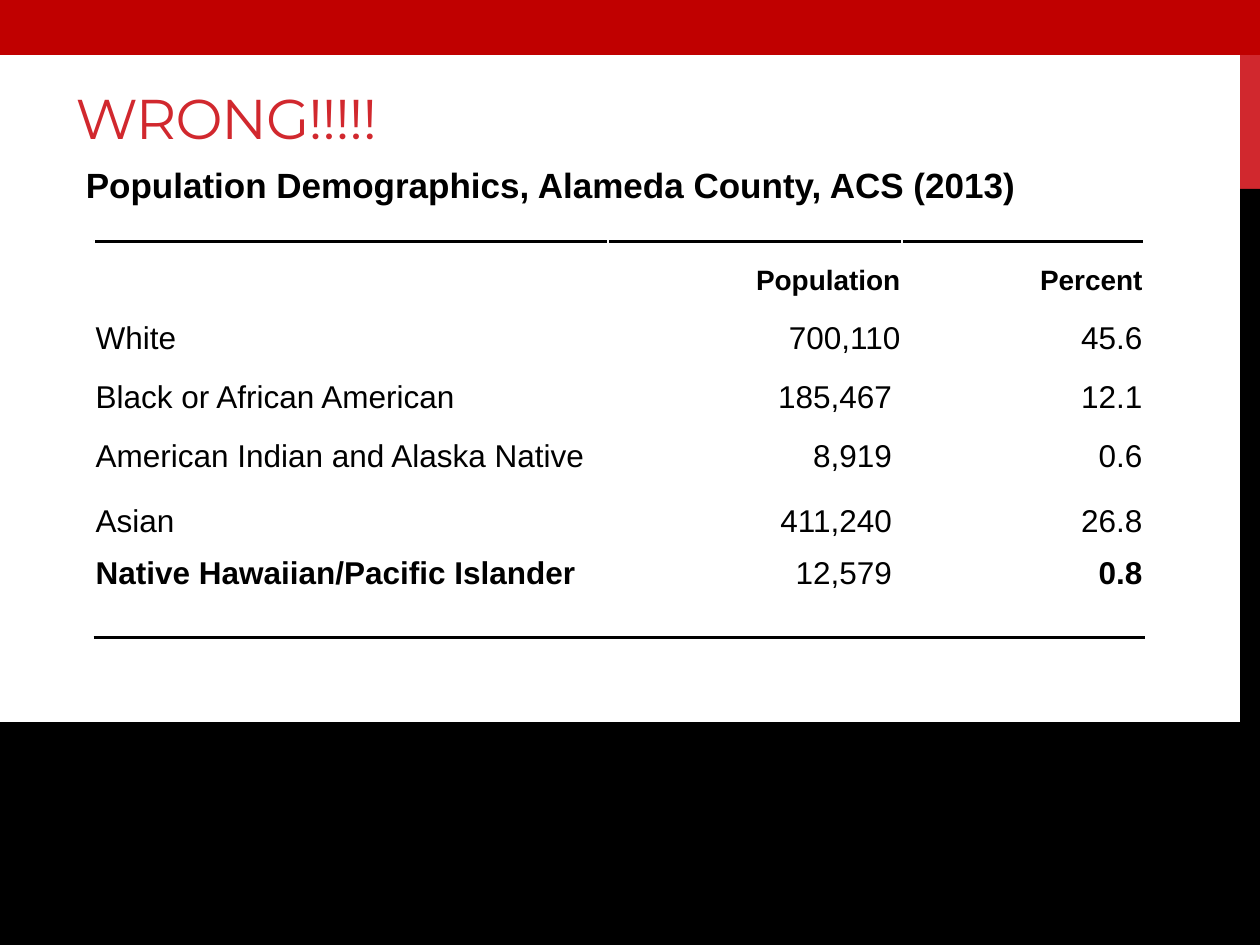
from lxml import etree
from pptx import Presentation
from pptx.dml.color import RGBColor
from pptx.enum.shapes import MSO_SHAPE
from pptx.enum.text import MSO_ANCHOR, MSO_AUTO_SIZE, PP_ALIGN
from pptx.oxml.ns import qn
from pptx.util import Cm, Pt

RECT = MSO_SHAPE.RECTANGLE
LEFT, RIGHT = PP_ALIGN.LEFT, PP_ALIGN.RIGHT
TOP, MIDDLE, BOTTOM = MSO_ANCHOR.TOP, MSO_ANCHOR.MIDDLE, MSO_ANCHOR.BOTTOM

RED, DARK_RED, BLACK, WHITE = "D1282E", "C00000", "000000", "FFFFFF"

TITLE = "WRONG!!!!!"
SUBTITLE = "Population Demographics, Alameda County, ACS (2013)"
ROWS = [
    ("", "Population", "Percent"),
    ("White", "700,110", "45.6"),
    ("Black or African American", "185,467", "12.1"),
    ("American Indian and Alaska Native", "8,919", "0.6"),
    ("Asian", "411,240", "26.8"),
    ("Native Hawaiian/Pacific Islander", "12,579", "0.8"),
]
BOLD_CELLS = {(0, 1), (0, 2), (5, 0), (5, 2)}
INDENTED_ROWS = range(2, 6)  # populations set slightly in from the right
COL_WIDTHS = [10.36, 5.92, 4.88]
ROW_HEIGHTS = [1.47, 1.19, 1.19, 1.3, 1.06, 1.77]

# left, top, width, height in cm, fill, outlined
BANDS = [
    (25, 0, 0.4, 3.81, RED, False),
    (25, 3.81, 0.4, 15.24, BLACK, False),
    (0, 14.6, 25.4, 4.45, BLACK, True),
    (0, 0, 25.4, 1.07, DARK_RED, True),
]


def rgb(color):
    return RGBColor.from_string(color)


def write(tf, text, size=18, font="Arial", color=BLACK, bold=False, align=LEFT):
    p = tf.paragraphs[0]
    p.alignment = align
    r = p.add_run()
    r.text = text
    r.font.size, r.font.name, r.font.bold = Pt(size), font, bold
    r.font.color.rgb = rgb(color)
    return p


def add_band(slide, left, top, width, height, color, outlined):
    sp = slide.shapes.add_shape(RECT, Cm(left), Cm(top), Cm(width), Cm(height))
    sp.shadow.inherit = False
    sp.fill.solid()
    sp.fill.fore_color.rgb = rgb(color)
    if outlined:
        sp.line.color.rgb = rgb(color)
        sp.line.width = Pt(2.25)
    else:
        sp.line.fill.background()


def add_border(cell, side):
    """Draw a black rule on one side of a cell: 'T' or 'B'."""
    ln = etree.Element(qn(f"a:ln{side}"), w=str(Pt(2)))
    fill = etree.SubElement(ln, qn("a:solidFill"))
    etree.SubElement(fill, qn("a:srgbClr"), val=BLACK)
    cell._tc.get_or_add_tcPr().insert(0, ln)


def add_population_table(slide):
    table = slide.shapes.add_table(
        len(ROWS), len(COL_WIDTHS), Cm(1.9), Cm(4.87),
        Cm(sum(COL_WIDTHS)), Cm(sum(ROW_HEIGHTS))).table
    table.first_row = table.horz_banding = False
    for column, width in zip(table.columns, COL_WIDTHS):
        column.width = Cm(width)
    for row, height in zip(table.rows, ROW_HEIGHTS):
        row.height = Cm(height)

    for i, row in enumerate(ROWS):
        for j, text in enumerate(row):
            cell = table.cell(i, j)
            cell.fill.solid()
            cell.fill.fore_color.rgb = rgb(WHITE)
            cell.margin_left = cell.margin_top = Cm(0.03)
            cell.margin_right = Cm(0.2 if j == 1 and i in INDENTED_ROWS else 0.03)
            cell.margin_bottom = 0
            cell.vertical_anchor = MIDDLE if i == 0 else TOP
            if text:
                p = write(cell.text_frame, text, size=16 if i == 0 else 18,
                          bold=(i, j) in BOLD_CELLS, align=RIGHT if j else LEFT)
                p.line_spacing, p.space_after = 1.15, Pt(10)
            if i == 0:
                add_border(cell, "T")
            elif i == len(ROWS) - 1:
                add_border(cell, "B")


def main():
    prs = Presentation()
    prs.slide_width, prs.slide_height = Cm(25.4), Cm(19.05)
    slide = prs.slides.add_slide(prs.slide_layouts[5])

    for band in BANDS:
        add_band(slide, *band)

    title = slide.shapes.title
    title.left, title.top, title.width, title.height = Cm(1.27), Cm(1.27), Cm(22.43), Cm(1.9)
    title.text_frame.vertical_anchor = BOTTOM
    p = write(title.text_frame, TITLE, size=32, font="Montserrat", color=RED)
    p.runs[0].font._element.set("spc", "-60")

    subtitle = slide.shapes.add_textbox(Cm(1.48), Cm(3.18), Cm(19.4), Cm(1.11))
    subtitle.text_frame.word_wrap = False
    subtitle.text_frame.auto_size = MSO_AUTO_SIZE.SHAPE_TO_FIT_TEXT
    write(subtitle.text_frame, SUBTITLE, size=20, bold=True)

    add_population_table(slide)
    prs.save("out.pptx")


if __name__ == "__main__":
    main()
